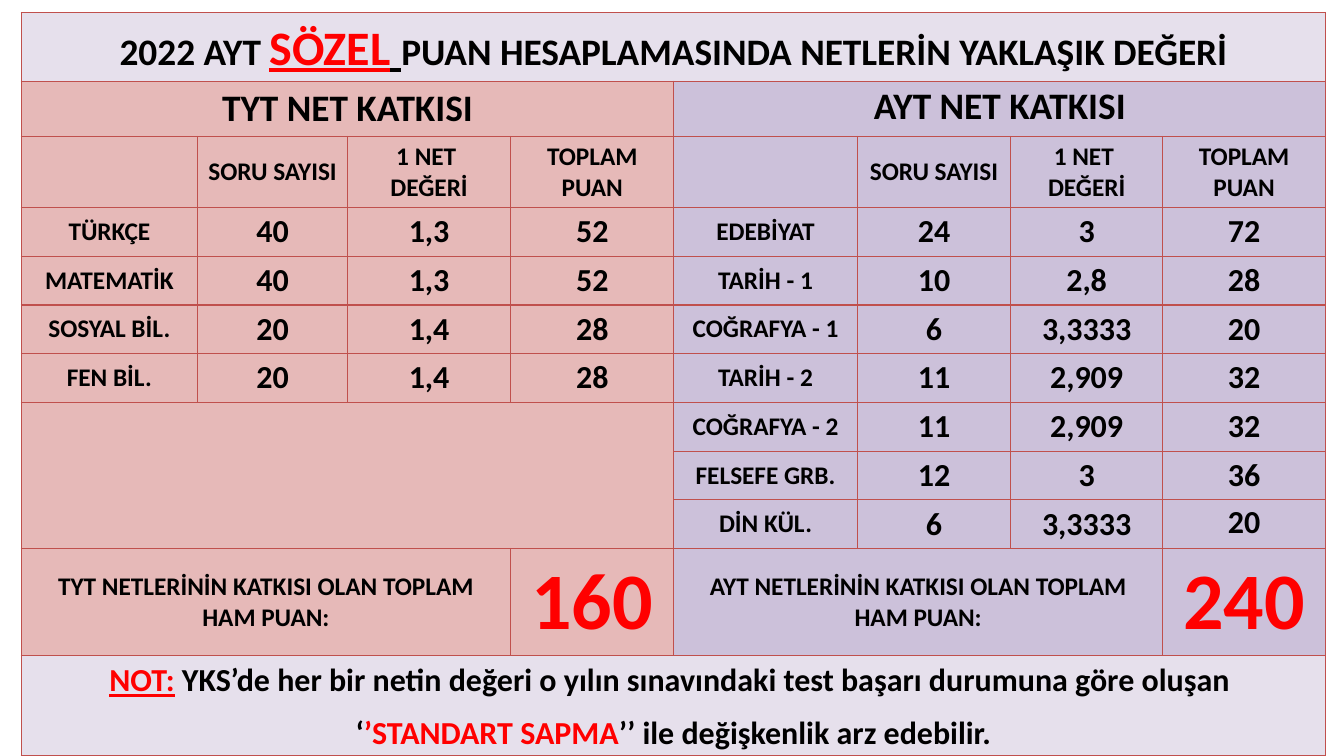
from lxml.etree import SubElement
from pptx import Presentation
from pptx.dml.color import RGBColor
from pptx.enum.text import MSO_ANCHOR as Anchor, PP_ALIGN as Align
from pptx.oxml import parse_xml
from pptx.oxml.ns import nsdecls, qn
from pptx.util import Inches, Pt

PINK, LILAC, PALE = "E6B9B8", "CCC1DA", "E6E0EC"
RED, BLACK, BORDER = "FF0000", "000000", "C0504D"
GRID_COLS, GRID_ROWS = 1400, 787
COL_WIDTHS = [184, 156, 170, 170, 191, 160, 158, 170]
ROW_HEIGHTS = [65, 52, 68] + [46] * 7 + [106, 84]
FIRST_SUBJECT, TOTAL_ROW, NOTE_ROW = 3, 10, 11

TYT = [
    ("TÜRKÇE", "40", "1,3", "52"),
    ("MATEMATİK", "40", "1,3", "52"),
    ("SOSYAL BİL.", "20", "1,4", "28"),
    ("FEN BİL.", "20", "1,4", "28"),
]
AYT = [
    ("EDEBİYAT", "24", "3", "72"),
    ("TARİH - 1", "10", "2,8", "28"),
    ("COĞRAFYA - 1", "6", "3,3333", "20"),
    ("TARİH - 2", "11", "2,909", "32"),
    ("COĞRAFYA - 2", "11", "2,909", "32"),
    ("FELSEFE GRB.", "12", "3", "36"),
    ("DİN KÜL.", "6", "3,3333", "20"),
]
HEADINGS = ["SORU SAYISI", "1 NET \nDEĞERİ", "TOPLAM PUAN"]


def rgb(value):
    return RGBColor.from_string(value)


class ScoreSlide:
    font = "Calibri"

    def __init__(self, prs):
        self.unit_x = prs.slide_width / GRID_COLS
        self.unit_y = prs.slide_height / GRID_ROWS
        self.s = prs.slides.add_slide(prs.slide_layouts[6])

    def x(self, cols):
        return round(cols * self.unit_x)

    def y(self, rows):
        return round(rows * self.unit_y)

    def table(self, left, top, width, height, col_widths, row_heights):
        frame = self.s.shapes.add_table(
            len(row_heights), len(col_widths),
            self.x(left), self.y(top), self.x(width), self.y(height))
        self.tbl = frame.table
        self.tbl.first_row = self.tbl.horz_banding = False
        for col, w in zip(self.tbl.columns, col_widths):
            col.width = self.x(w)
        for row, h in zip(self.tbl.rows, row_heights):
            row.height = self.y(h)
        frame.height = self.y(height)

    def paint(self, cell, fill):
        cell.fill.solid()
        cell.fill.fore_color.rgb = rgb(fill)
        props = cell._tc.get_or_add_tcPr()
        for i, side in enumerate("LRTB"):
            ln = parse_xml(f'<a:ln{side} {nsdecls("a")} w="{Pt(1)}"/>')
            solid = SubElement(ln, qn("a:solidFill"))
            SubElement(solid, qn("a:srgbClr"), val=BORDER)
            props.insert(i, ln)

    def merge(self, row, col, rows, cols):
        self.tbl.cell(row, col).merge(self.tbl.cell(row + rows - 1, col + cols - 1))

    def text(self, row, col, text, size, color=BLACK, anchor=Anchor.MIDDLE, tight=False):
        lines = [[(line, {})] for line in text.split("\n")]
        self.rich(row, col, lines, size, color, anchor, tight)

    def rich(self, row, col, lines, size, color=BLACK, anchor=Anchor.TOP,
             tight=True, spaced=False):
        cell = self.tbl.cell(row, col)
        cell.vertical_anchor = anchor
        cell.margin_left = cell.margin_right = self.x(6 if tight else 10)
        cell.margin_top = cell.margin_bottom = self.y(3 if tight else 5)
        tf = cell.text_frame
        for i, runs in enumerate(lines):
            p = tf.add_paragraph() if i else tf.paragraphs[0]
            p.alignment = Align.CENTER
            if spaced:
                p.line_spacing = 1.07
                p.space_after = Pt(8)
            p.font.name, p.font.size, p.font.bold = self.font, Pt(size), True
            p.font.color.rgb = rgb(color)
            for words, style in runs:
                r = p.add_run()
                r.text = words
                if "size" in style:
                    r.font.size = Pt(style["size"])
                if "color" in style:
                    r.font.color.rgb = rgb(style["color"])
                if "underline" in style:
                    r.font.underline = style["underline"]

    def half(self, col, name, subjects, total, head_tight, total_anchor):
        self.merge(1, col, 1, 4)
        self.text(1, col, f"{name} NET KATKISI", 28, anchor=Anchor.TOP, tight=head_tight)
        for j, heading in enumerate(HEADINGS, 1):
            self.text(2, col + j, heading, 19)
        for i, values in enumerate(subjects):
            for j, value in enumerate(values):
                late = i >= 4 and j >= 2
                last = i == 6 and j == 3
                self.text(FIRST_SUBJECT + i, col + j, value, 24 if j else 19,
                          anchor=Anchor.TOP if last else Anchor.MIDDLE, tight=late)
        self.merge(TOTAL_ROW, col, 1, 3)
        self.text(TOTAL_ROW, col, f"{name} NETLERİNİN KATKISI OLAN TOPLAM HAM PUAN:", 19)
        self.text(TOTAL_ROW, col + 3, total, 60, RED, total_anchor)


def main():
    prs = Presentation()
    prs.slide_width, prs.slide_height = Inches(14), Inches(7.87)
    slide = ScoreSlide(prs)
    slide.table(22, 13, 1358, 757, COL_WIDTHS, ROW_HEIGHTS)

    for i in range(len(ROW_HEIGHTS)):
        for j in range(len(COL_WIDTHS)):
            fill = PALE if i in (0, NOTE_ROW) else PINK if j < 4 else LILAC
            slide.paint(slide.tbl.cell(i, j), fill)

    slide.merge(0, 0, 1, 8)
    slide.rich(0, 0, [[
        ("2022 AYT ", {}),
        ("SÖZEL", {"size": 36, "color": RED, "underline": True}),
        (" ", {"size": 36, "underline": True}),
        ("PUAN HESAPLAMASINDA NETLERİN YAKLAŞIK DEĞERİ", {}),
    ]], 28, spaced=True)

    slide.half(0, "TYT", TYT, "160", False, Anchor.MIDDLE)
    slide.half(4, "AYT", AYT, "240", True, Anchor.TOP)
    slide.merge(FIRST_SUBJECT + len(TYT), 0, 3, 4)

    slide.merge(NOTE_ROW, 0, 1, 8)
    slide.rich(NOTE_ROW, 0, [
        [("NOT:", {"color": RED, "underline": True}),
         (" YKS’de her bir netin değeri o yılın sınavındaki test başarı "
          "durumuna göre oluşan ", {})],
        [("‘", {}),
         ("’STANDART SAPMA", {"color": RED}),
         ("’’ ile değişkenlik arz edebilir.", {})],
    ], 24, spaced=True)

    prs.save("out.pptx")


if __name__ == "__main__":
    main()
